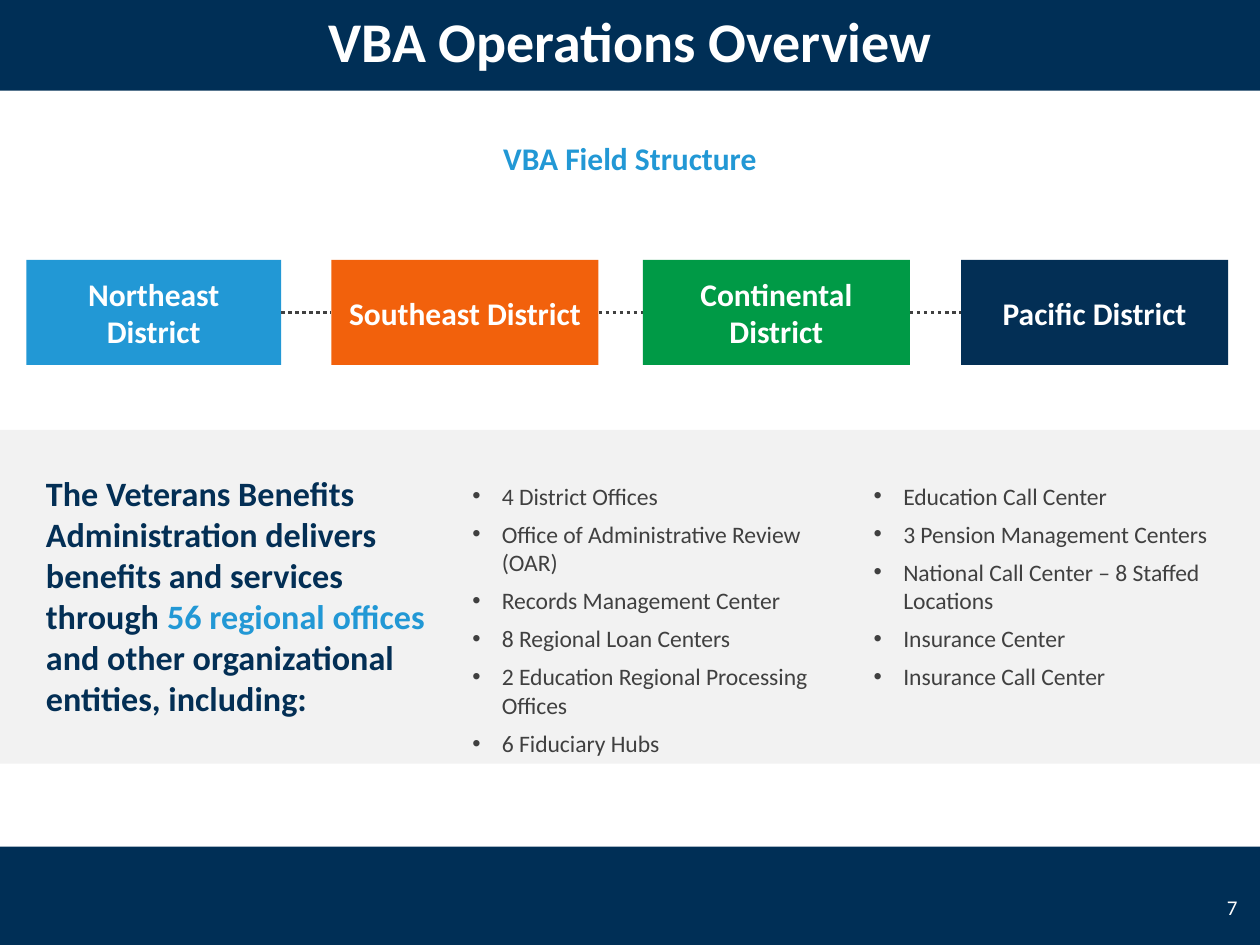
from lxml import etree
from pptx import Presentation
from pptx.dml.color import RGBColor
from pptx.enum import dml, shapes, text
from pptx.oxml import ns
from pptx.util import Pt

WIDTH, HEIGHT = 720, 540
COLOURS = {
    "bar": "002F56", "navy": "032F55", "blue": "2298D5", "orange": "F2610C",
    "green": "009A46", "panel": "F2F2F2", "grey": "404040", "white": "FFFFFF",
}
DISTRICTS = [  # name, fill, left, width
    ("Northeast District", "blue", 15.1, 145.5),
    ("Southeast District", "orange", 189.4, 152.6),
    ("Continental District", "green", 367.3, 152.6),
    ("Pacific District", "navy", 549.2, 152.6),
]
MISSION = [
    ("The Veterans Benefits Administration delivers benefits and services through ", "navy"),
    ("56 regional offices ", "blue"),
    ("and other organizational entities, including:", "navy"),
]
ENTITIES = [
    "4 District Offices",
    "Office of Administrative Review (OAR)",
    "Records Management Center",
    "8 Regional Loan Centers",
    "2 Education Regional Processing Offices",
    "6 Fiduciary Hubs",
    "Education Call Center",
    "3 Pension Management Centers",
    "National Call Center – 8 Staffed Locations",
    "Insurance Center",
    "Insurance Call Center",
]


def rgb(colour):
    return RGBColor.from_string(COLOURS[colour])


def add_block(slide, box, colour):
    block = slide.shapes.add_shape(shapes.MSO_SHAPE.RECTANGLE, *map(Pt, box))
    block.shadow.inherit = False
    block.fill.solid()
    block.fill.fore_color.rgb = rgb(colour)
    block.line.fill.background()
    return block


def add_textbox(slide, box):
    return slide.shapes.add_textbox(*map(Pt, box))


def write(paragraph, runs, size, bold=False, **layout):
    """Fill a paragraph with (wording, colour) runs in one size."""
    for name, value in layout.items():
        setattr(paragraph, name, value)
    for wording, colour in runs:
        run = paragraph.add_run()
        run.text = wording
        for name, value in {"name": "Calibri", "size": Pt(size), "bold": bold}.items():
            setattr(run.font, name, value)
        run.font.color.rgb = rgb(colour)


def write_label(shape, wording, colour, size, bold=True, align=text.PP_ALIGN.CENTER):
    frame = shape.text_frame
    frame.word_wrap = True
    frame.vertical_anchor = text.MSO_ANCHOR.MIDDLE
    write(frame.paragraphs[0], [(wording, colour)], size, bold, alignment=align)


def add_bullet(paragraph, indent):
    properties = paragraph._p.get_or_add_pPr()
    properties.set("marL", str(Pt(indent)))
    properties.set("indent", str(-Pt(indent)))
    colour = etree.SubElement(properties, ns.qn("a:buClr"))
    etree.SubElement(colour, ns.qn("a:srgbClr"), val=COLOURS["grey"])
    etree.SubElement(properties, ns.qn("a:buFont"), typeface="Arial")
    etree.SubElement(properties, ns.qn("a:buChar"), char="•")


def add_dotted_link(slide, start, end, y):
    link = slide.shapes.add_connector(
        shapes.MSO_CONNECTOR.STRAIGHT, Pt(start), Pt(y), Pt(end), Pt(y))
    link.line.color.rgb = rgb("grey")
    link.line.width = Pt(2)
    link.line.dash_style = dml.MSO_LINE.ROUND_DOT
    etree.SubElement(link._element.spPr, ns.qn("a:effectLst"))


def add_header(slide, box):
    left, top, width, height = box
    write_label(add_block(slide, box, "bar"), "VBA Operations Overview", "white", 32)
    subtitle = add_textbox(slide, (left + 257, top + 77.8, width - 514, 36.7))
    write_label(subtitle, "VBA Field Structure", "blue", 18)


def add_districts(slide, top, height):
    previous_right = None
    for name, colour, left, width in DISTRICTS:
        if previous_right is not None:
            add_dotted_link(slide, previous_right, left, top + height / 2)
        write_label(add_block(slide, (left, top, width, height), colour), name, "white", 18)
        previous_right = left + width


def add_entities_panel(slide, box):
    left, top, width, height = box
    add_block(slide, box, "panel")

    mission = add_textbox(slide, (left + 19.2, top + 21, 235, 149)).text_frame
    mission.word_wrap = True
    write(mission.paragraphs[0], MISSION, 19.5, True, space_after=Pt(4.5))

    entities = add_textbox(slide, (left + 262.8, top + 26, 451.4, height - 26)).text_frame
    entities.word_wrap = True
    columns = entities._txBody.bodyPr
    columns.set("numCol", "2")
    columns.set("spcCol", str(Pt(21.6)))
    for index, entity in enumerate(ENTITIES):
        paragraph = entities.add_paragraph() if index else entities.paragraphs[0]
        add_bullet(paragraph, 16.9)
        write(paragraph, [(entity, "grey")], 13.5, space_after=Pt(5.6))


def add_footer(slide, box):
    left, top, width, height = box
    add_block(slide, box, "bar")
    number = add_textbox(slide, (left + width - 36, top + 20.2, 30.2, 28.8))
    write_label(number, "7", "white", 12, False, text.PP_ALIGN.RIGHT)


def main():
    deck = Presentation()
    deck.slide_width, deck.slide_height = Pt(WIDTH), Pt(HEIGHT)
    slide = deck.slides.add_slide(deck.slide_layouts[6])
    add_footer(slide, (0, 483.8, WIDTH, 57.6))
    add_header(slide, (0, -5.8, WIDTH, 57.6))
    add_entities_panel(slide, (0, 245.6, WIDTH, 190.8))
    add_districts(slide, 148.5, 60)
    deck.save("out.pptx")


if __name__ == "__main__":
    main()
